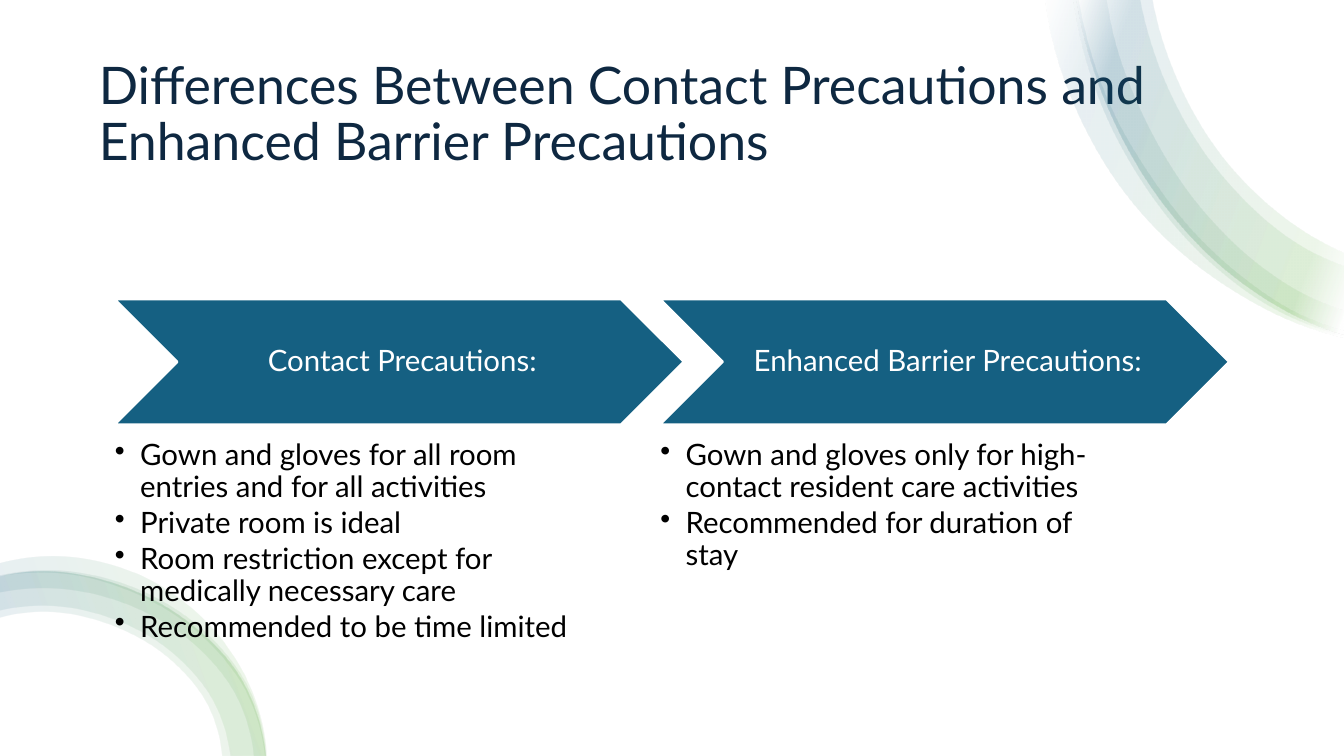
from dataclasses import dataclass
from math import dist

from lxml.etree import SubElement
from pptx import Presentation
from pptx.dml.color import RGBColor
from pptx.enum.shapes import MSO_SHAPE
from pptx.enum.text import MSO_ANCHOR, MSO_AUTO_SIZE, PP_ALIGN
from pptx.oxml.ns import qn
from pptx.util import Inches, Pt


@dataclass(frozen=True)
class Theme:
    """Colours, font and type sizes of the slide."""
    font: str = "Lato"
    title_size: int = 37
    body_size: int = 21
    navy: str = "0E2841"
    blue: str = "156082"
    green: str = "4EA72E"
    white: str = "FFFFFF"
    black: str = "000000"
    ribbon_opacity: int = 10


THEME = Theme()

TITLE = "Differences Between Contact Precautions and Enhanced Barrier Precautions"
COLUMNS = [
    ("Contact Precautions:", [
        "Gown and gloves for all room entries and for all activities",
        "Private room is ideal",
        "Room restriction except for medically necessary care",
        "Recommended to be time limited",
    ]),
    ("Enhanced Barrier Precautions:", [
        "Gown and gloves only for high-contact resident care activities",
        "Recommended for duration of stay",
    ]),
]
COLUMN_LEFT, COLUMN_STEP = 1.14, 5.41

TOP_ANGLE, BOTTOM_ANGLE = 160, 200
TOP_OUTER = [(10.68, 0), (10.99, 1.07), (11.52, 2), (12.23, 2.74), (13.09, 3.24), (13.33, 3.32)]
BOTTOM_OUTER = [(0, 5.72), (0.4, 5.67), (1.17, 5.8), (1.85, 6.16), (2.36, 6.69), (2.63, 7.5)]
TOP_RIBBONS = [
    ([(10.37, 0), (10.41, 0.26), (10.78, 1.31), (11.16, 1.92), (11.65, 2.45),
      (12.21, 2.87), (12.82, 3.19), (13.33, 3.35)],
     [(13.33, 3.28), (12.86, 3.1), (12.3, 2.73), (11.81, 2.27), (11.4, 1.73),
      (11.06, 1.15), (10.82, 0.52), (10.7, 0)]),
    (TOP_OUTER,
     [(13.33, 2.51), (13.07, 2.38), (12.19, 1.64), (11.58, 0.55), (11.43, 0)]),
    ([(10.65, 0), (10.99, 1.19), (11.32, 1.79), (11.73, 2.33), (12.79, 3.14), (13.33, 3.33)],
     [(13.33, 3.08), (12.9, 2.9), (12.39, 2.55), (11.95, 2.11), (11.29, 1.04),
      (11.07, 0.44), (10.98, 0)]),
    (TOP_OUTER,
     [(13.33, 2.64), (13.01, 2.5), (12.1, 1.72), (11.47, 0.59), (11.31, 0)]),
]
BOTTOM_RIBBONS = [
    (BOTTOM_OUTER,
     [(2.2, 7.5), (2.06, 7), (1.66, 6.52), (1.07, 6.19), (0.4, 6.07), (0, 6.13)]),
    (BOTTOM_OUTER,
     [(2.28, 7.5), (2.12, 6.97), (1.7, 6.47), (1.09, 6.13), (0.4, 6.01), (0, 6.06)]),
    ([(0, 5.71), (0.5, 5.66), (1.42, 5.87), (2.03, 6.27), (2.47, 6.85), (2.63, 7.5)],
     [(2.51, 7.5), (2.34, 6.91), (1.92, 6.39), (1.34, 6.03), (0.67, 5.85), (0, 5.88)]),
    ([(0, 5.59), (0.51, 5.52), (1.48, 5.75), (2.1, 6.23), (2.5, 6.87), (2.64, 7.5)],
     [(2.62, 7.5), (2.45, 6.89), (2, 6.31), (1.39, 5.91), (0.69, 5.7), (0, 5.72)]),
]


def paint(shape, color):
    """Give a shape a solid fill and no shadow."""
    shape.shadow.inherit = False
    shape.fill.solid()
    shape.fill.fore_color.rgb = RGBColor.from_string(color)


def style_paragraph(paragraph, size, color, align=PP_ALIGN.LEFT):
    """Set the font, alignment and line spacing of a paragraph."""
    paragraph.alignment = align
    paragraph.line_spacing = 0.9
    paragraph.font.name = THEME.font
    paragraph.font.size = Pt(size)
    paragraph.font.color.rgb = RGBColor.from_string(color)


def set_margins(frame, left, others):
    """Set the inner margins of a text frame in inches."""
    frame.margin_left = Inches(left)
    frame.margin_top = frame.margin_right = frame.margin_bottom = Inches(others)


def add_backdrop(slide, width, height):
    """Lay a white panel behind everything else on the slide."""
    backdrop = slide.shapes.add_shape(MSO_SHAPE.RECTANGLE, 0, 0, width, height)
    paint(backdrop, THEME.white)
    backdrop.line.fill.background()
    slide.shapes.title.element.addprevious(backdrop.element)


def place_title(title):
    """Move and format the title placeholder."""
    title.left, title.top = Inches(0.88), Inches(0.5)
    title.width, title.height = Inches(11.57), Inches(1.3)
    frame = title.text_frame
    frame.text = TITLE
    frame.word_wrap = True
    frame.auto_size = MSO_AUTO_SIZE.NONE
    frame.vertical_anchor = MSO_ANCHOR.MIDDLE
    style_paragraph(frame.paragraphs[0], THEME.title_size, THEME.navy)


def curve_segments(points):
    """Return two control points and an end for each span of a smooth edge."""
    spans = [dist(a, b) for a, b in zip(points, points[1:])]
    slopes = [[(q - p) / span for p, q in zip(a, b)]
              for a, b, span in zip(points, points[1:], spans)]
    inner = [[(p * after + q * before) / (before + after) for p, q in zip(s, t)]
             for s, t, before, after in zip(slopes, slopes[1:], spans, spans[1:])]
    first = [2 * p - q for p, q in zip(slopes[0], inner[0])]
    last = [2 * p - q for p, q in zip(slopes[-1], inner[-1])]
    tangents = [first, *inner, last]
    return [([p + v * span / 3 for p, v in zip(a, u)],
             [q - w * span / 3 for q, w in zip(b, t)], b)
            for a, b, u, t, span in zip(points, points[1:], tangents, tangents[1:], spans)]


def bend_edge(lines, points, ribbon):
    """Turn the straight segments along one edge into curves."""
    for line, segment in zip(lines, curve_segments(points)):
        line.tag = qn("a:cubicBezTo")
        line.remove(line[0])
        for x, y in segment:
            SubElement(line, qn("a:pt"), x=str(Inches(x) - ribbon.left),
                       y=str(Inches(y) - ribbon.top))


def fade_fill(shape, angle):
    """Fill a shape with the translucent white, green, blue, white gradient."""
    shape.fill.gradient()
    shape.fill.gradient_angle = angle
    stops = shape.element.spPr.find(qn("a:gradFill")).find(qn("a:gsLst"))
    for stop in list(stops):
        stops.remove(stop)
    for percent, color in [(2, THEME.white), (16, THEME.green),
                           (85, THEME.blue), (100, THEME.white)]:
        stop = SubElement(stops, qn("a:gs"), pos=str(percent * 1000))
        tint = SubElement(stop, qn("a:srgbClr"), val=color)
        SubElement(tint, qn("a:alpha"), val=str(THEME.ribbon_opacity * 1000))


def add_ribbon(slide, outer, inner, angle):
    """Draw a curved band between an outer and an inner edge."""
    outline = [(Inches(x), Inches(y)) for x, y in outer + inner]
    builder = slide.shapes.build_freeform(*outline[0])
    builder.add_line_segments(outline[1:], close=True)
    ribbon = builder.convert_to_shape()
    lines = list(ribbon.element.iter(qn("a:lnTo")))
    bend_edge(lines[:len(outer) - 1], outer, ribbon)
    bend_edge(lines[len(outer):], inner, ribbon)
    ribbon.shadow.inherit = False
    ribbon.line.fill.background()
    fade_fill(ribbon, angle)


def add_heading(slide, left, heading):
    """Draw a chevron that holds a column heading."""
    chevron = slide.shapes.add_shape(
        MSO_SHAPE.CHEVRON, Inches(left), Inches(2.97), Inches(5.64), Inches(1.24))
    paint(chevron, THEME.blue)
    chevron.line.color.rgb = RGBColor.from_string(THEME.white)
    chevron.line.width = Pt(1.5)
    frame = chevron.text_frame
    frame.text = heading
    frame.word_wrap = True
    frame.vertical_anchor = MSO_ANCHOR.MIDDLE
    set_margins(frame, 0.09, 0.03)
    style_paragraph(frame.paragraphs[0], THEME.body_size, THEME.white, PP_ALIGN.CENTER)


def add_bullets(slide, left, points):
    """Write a bulleted list below a column heading."""
    frame = slide.shapes.add_textbox(
        Inches(left), Inches(4.37), Inches(4.51), Inches(2.12)).text_frame
    frame.word_wrap = True
    set_margins(frame, 0, 0)
    frame.text = "\n".join(points)
    for paragraph in frame.paragraphs:
        properties = paragraph._p.get_or_add_pPr()
        properties.set("marL", str(Inches(0.25)))
        properties.set("indent", str(Inches(-0.25)))
        SubElement(properties, qn("a:buChar"), char="•")
        style_paragraph(paragraph, THEME.body_size, THEME.black)
        paragraph.space_after = Pt(3)


def main():
    """Build and save the slide."""
    deck = Presentation()
    deck.slide_width, deck.slide_height = Inches(13.33), Inches(7.5)
    slide = deck.slides.add_slide(deck.slide_layouts[5])
    add_backdrop(slide, deck.slide_width, deck.slide_height)
    place_title(slide.shapes.title)
    for ribbons, angle in [(TOP_RIBBONS, TOP_ANGLE), (BOTTOM_RIBBONS, BOTTOM_ANGLE)]:
        for outer, inner in ribbons:
            add_ribbon(slide, outer, inner, angle)
    for index, (heading, points) in enumerate(COLUMNS):
        left = COLUMN_LEFT + index * COLUMN_STEP
        add_heading(slide, left, heading)
        add_bullets(slide, left, points)
    deck.save("out.pptx")


if __name__ == "__main__":
    main()
